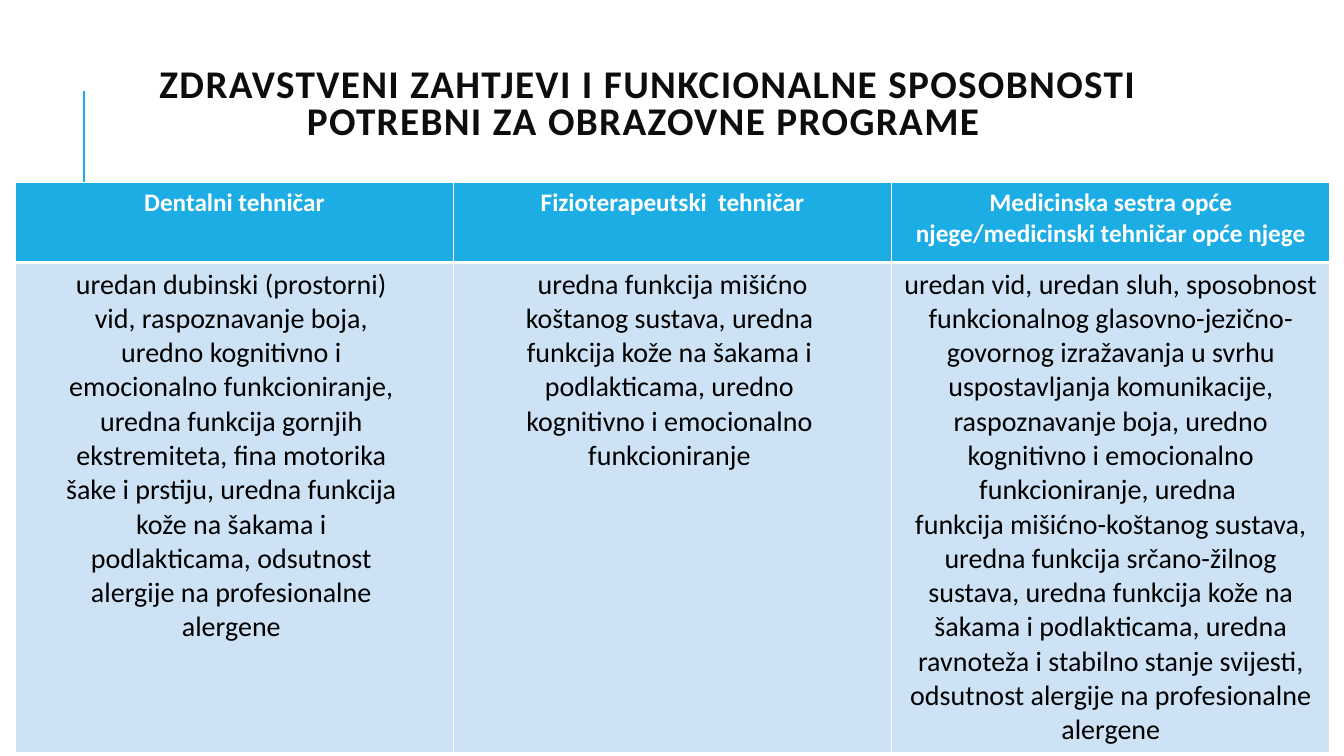
from dataclasses import dataclass

from lxml import etree
from pptx import Presentation
from pptx.dml.color import RGBColor
from pptx.enum.shapes import MSO_CONNECTOR
from pptx.enum.text import MSO_ANCHOR, MSO_AUTO_SIZE, PP_ALIGN
from pptx.oxml.ns import qn
from pptx.util import Pt

CENTER = PP_ALIGN.CENTER
MIDDLE = MSO_ANCHOR.MIDDLE
STRAIGHT = MSO_CONNECTOR.STRAIGHT
NO_AUTOFIT = MSO_AUTO_SIZE.NONE

TITLE = "ZDRAVSTVENI ZAHTJEVI I FUNKCIONALNE SPOSOBNOSTI POTREBNI ZA OBRAZOVNE PROGRAME "
REQUIREMENTS = {
    "Dentalni tehničar": [
        "uredan dubinski (prostorni) ",
        "vid, raspoznavanje boja, ",
        "uredno kognitivno i ",
        "emocionalno funkcioniranje, ",
        "uredna funkcija gornjih ",
        "ekstremiteta, fina motorika ",
        "šake i prstiju, uredna funkcija ",
        "kože na šakama i ",
        "podlakticama, odsutnost ",
        "alergije na profesionalne ",
        "alergene ",
    ],
    "Fizioterapeutski  tehničar": [
        "uredna funkcija mišićno",
        "koštanog sustava, uredna ",
        "funkcija kože na šakama i ",
        "podlakticama, uredno ",
        "kognitivno i emocionalno ",
        "funkcioniranje ",
    ],
    "Medicinska sestra opće njege/medicinski tehničar opće njege": [
        "uredan vid, uredan sluh, sposobnost funkcionalnog glasovno-jezično-govornog "
        "izražavanja u svrhu uspostavljanja komunikacije, raspoznavanje boja, uredno "
        "kognitivno i emocionalno funkcioniranje, uredna ",
        "funkcija mišićno-koštanog sustava, uredna funkcija srčano-žilnog sustava, "
        "uredna funkcija kože na šakama i podlakticama, uredna ravnoteža i stabilno "
        "stanje svijesti, odsutnost alergije na profesionalne alergene",
    ],
}


@dataclass(frozen=True)
class Theme:
    font: str = "Calibri"
    accent: str = "1CADE4"
    pale: str = "CDE3F5"
    white: str = "FFFFFF"
    ink: str = "0D0D0D"
    black: str = "000000"
    title_size: int = 28
    header_size: int = 18
    body_size: int = 20


class SlideBuilder:
    """Adds themed elements to one slide."""

    def __init__(self, slide, theme):
        self.slide = slide
        self.theme = theme

    def set_text(self, frame, lines, size, color, bold):
        frame.text = "\n".join(lines)
        for paragraph in frame.paragraphs:
            paragraph.alignment = CENTER
            font = paragraph.font
            font.name, font.size, font.bold = self.theme.font, Pt(size), bold
            font.color.rgb = RGBColor.from_string(color)

    def title(self, text, left, top, width, height):
        heading = self.slide.shapes.title
        heading.left, heading.top = Pt(left), Pt(top)
        heading.width, heading.height = Pt(width), Pt(height)
        frame = heading.text_frame
        self.set_text(frame, [text], self.theme.title_size, self.theme.ink, True)
        frame.word_wrap = True
        frame.auto_size = NO_AUTOFIT
        frame.vertical_anchor = MIDDLE
        paragraph = frame.paragraphs[0]
        paragraph.line_spacing = 0.8
        paragraph.space_before = Pt(0)
        paragraph.runs[0].font._element.set("spc", "100")

    def rule(self, x, start, end, weight):
        accent_rule = self.slide.shapes.add_connector(
            STRAIGHT, Pt(x), Pt(start), Pt(x), Pt(end))
        accent_rule.line.color.rgb = RGBColor.from_string(self.theme.accent)
        accent_rule.line.width = Pt(weight)
        etree.SubElement(accent_rule._element.spPr, qn("a:effectLst"))

    def cell(self, cell, lines, size, color, bold, fill, borders):
        self.set_text(cell.text_frame, lines, size, color, bold)
        properties = cell._tc.get_or_add_tcPr()
        for side, weight in borders.items():
            border = etree.SubElement(properties, qn(f"a:ln{side}"), w=str(Pt(weight)))
            paint = etree.SubElement(border, qn("a:solidFill"))
            etree.SubElement(paint, qn("a:srgbClr"), val=self.theme.white)
        cell.fill.solid()
        cell.fill.fore_color.rgb = RGBColor.from_string(fill)

    def table(self, columns, left, top, width, row_heights):
        theme = self.theme
        grid = self.slide.shapes.add_table(
            len(row_heights), len(columns), Pt(left), Pt(top),
            Pt(width), Pt(sum(row_heights))).table
        for row, height in zip(grid.rows, row_heights):
            row.height = Pt(height)
        for index, (programme, needs) in enumerate(columns.items()):
            self.cell(grid.cell(0, index), [programme], theme.header_size, theme.white,
                      True, theme.accent, {"L": 1, "R": 1, "T": 1, "B": 3})
            self.cell(grid.cell(1, index), needs, theme.body_size, theme.black,
                      False, theme.pale, {"L": 1, "R": 1, "T": 3, "B": 1})


def main():
    presentation = Presentation()
    presentation.slide_width, presentation.slide_height = Pt(960), Pt(540)
    slide = presentation.slides.add_slide(presentation.slide_layouts[5])
    builder = SlideBuilder(slide, Theme())
    builder.rule(60, 137, 65, 1.5)
    builder.title(TITLE, 80.6, 16.6, 765.4, 118)
    builder.table(REQUIREMENTS, 11, 130.5, 939, [56.9, 324.7])
    presentation.save("out.pptx")


if __name__ == "__main__":
    main()
